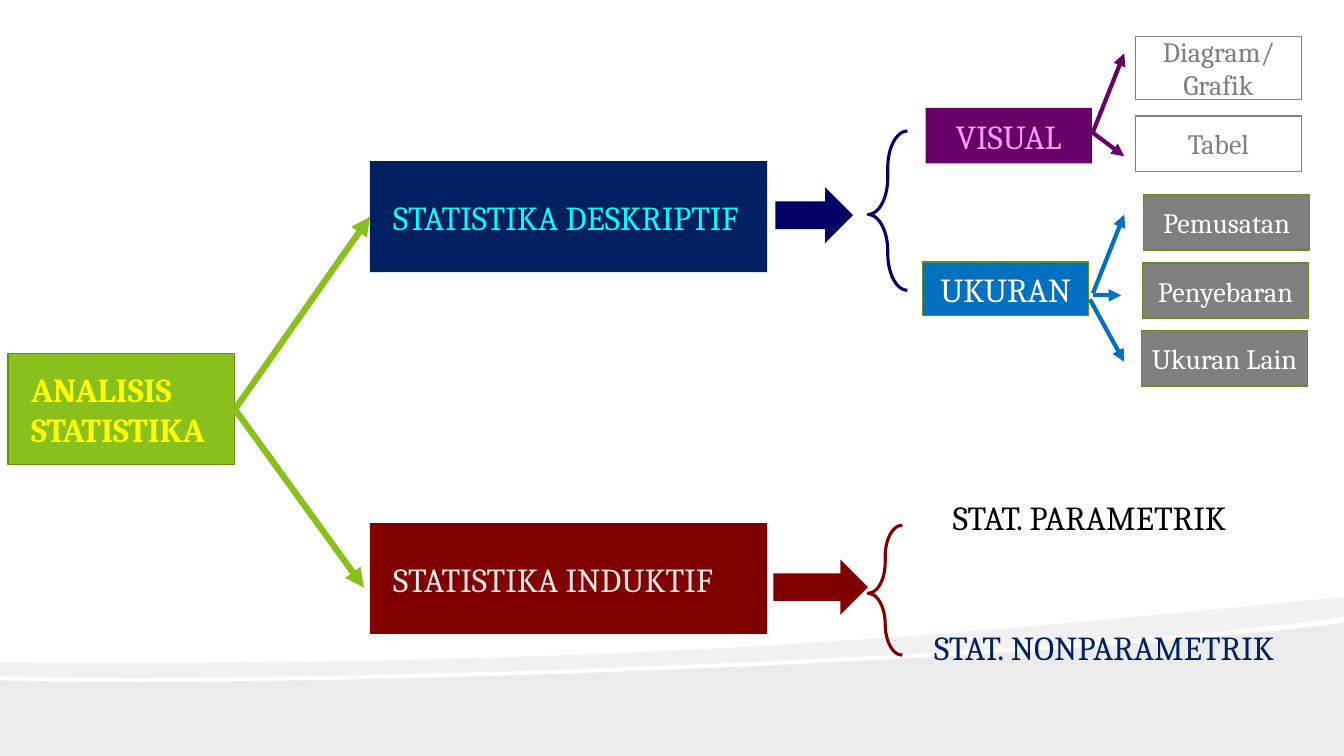
from pptx import Presentation
from pptx import util as u
from pptx.dml.color import RGBColor
from pptx.enum import shapes, text
from pptx.oxml.ns import qn
from lxml import etree

WHITE = RGBColor(0xFF, 0xFF, 0xFF)
BLACK = RGBColor(0, 0, 0)
GREEN = RGBColor(0x89, 0xC0, 0x1C)
OLIVE = RGBColor(0x65, 0x8E, 0x15)
YELLOW = RGBColor(0xFF, 0xFF, 0x00)
NAVY = RGBColor(0x00, 0x20, 0x60)
CYAN = RGBColor(0x00, 0xFF, 0xFF)
DARK = RGBColor(0x00, 0x00, 0x66)
RED = RGBColor(0x80, 0x00, 0x00)
PALE = RGBColor(0xE6, 0xE6, 0xE6)
PURPLE = RGBColor(0x66, 0x00, 0x66)
PINK = RGBColor(0xFF, 0x99, 0xFF)
BLUE = RGBColor(0x00, 0x70, 0xC0)
GRAY = RGBColor(0x7F, 0x7F, 0x7F)

WIDE, HIGH = 13.33, 7.5
FONT = "Cambria"
KIND = shapes.MSO_SHAPE
ALIGN = text.PP_ALIGN


def paint(shape, fill=None, line=None, width=0.85):
    shape.shadow.inherit = False
    if fill is None:
        shape.fill.background()
    else:
        shape.fill.solid()
        shape.fill.fore_color.rgb = fill
    if line is None:
        shape.line.fill.background()
    else:
        shape.line.color.rgb = line
        shape.line.width = u.Pt(width)


def write(shape, words, size=24, color=WHITE, bold=False, align=ALIGN.CENTER, left=0.1):
    frame = shape.text_frame
    frame.word_wrap = True
    frame.vertical_anchor = text.MSO_ANCHOR.MIDDLE
    frame.margin_left = u.Inches(left)
    frame.text = words
    for para in frame.paragraphs:
        para.alignment = align
        font = para.runs[0].font
        font.name, font.size, font.bold = FONT, u.Pt(size), bold
        font.color.rgb = color


def place(slide, kind, box, **look):
    shape = slide.shapes.add_shape(kind, *map(u.Inches, box))
    paint(shape, **look)
    return shape


def card(slide, box, words, fill=None, line=None, **form):
    write(place(slide, KIND.RECTANGLE, box, fill=fill, line=line), words, **form)


def arrow(slide, start, end, color, width=3):
    link = slide.shapes.add_connector(
        shapes.MSO_CONNECTOR.STRAIGHT, *map(u.Inches, start + end))
    link.line.color.rgb = color
    link.line.width = u.Pt(width)
    etree.SubElement(link.line._get_or_add_ln(), qn("a:tailEnd"), type="triangle")
    etree.SubElement(link._element.spPr, qn("a:effectLst"))


def brace(slide, box, color):
    shape = place(slide, KIND.LEFT_BRACE, box, line=color, width=2.25)
    shape.adjustments[0], shape.adjustments[1] = 0.932, 0.524


def wave(slide, start, steps, alpha):
    """Outline whose steps hold one point for a line, three for a curve."""
    unit = 100
    form = slide.shapes.build_freeform(
        *(v * unit for v in start), scale=u.Inches(1) / unit)
    form.add_line_segments([(x * unit, y * unit) for step in steps for x, y in step])
    shape = form.convert_to_shape()
    paint(shape, fill=BLACK)
    tint = shape._element.spPr.find(".//" + qn("a:srgbClr"))
    etree.SubElement(tint, qn("a:alpha"), val=str(alpha * 1000))
    lines = iter(shape._element.spPr.findall(".//" + qn("a:lnTo")))
    for step in steps:
        parts = [next(lines) for _ in step]
        if len(parts) == 3:
            bend = etree.Element(qn("a:cubicBezTo"))
            parts[0].addprevious(bend)
            for part in parts:
                bend.append(part[0])
                part.getparent().remove(part)


def ground(slide):
    wave(slide, (0, 6.75),
         [[(3.52, 6.83), (10.42, 6.55), (WIDE, 6.18)],
          [(WIDE, HIGH)], [(0, HIGH)], [(0, 6.75)]], 8)
    wave(slide, (0, 6.57),
         [[(6.52, 6.62), (9.71, 6.27), (WIDE, 5.92)],
          [(WIDE, 6.12)],
          [(12.55, 6.23), (11.49, 6.33), (10.29, 6.41)],
          [(6.98, 6.63), (2.58, 6.77), (0, 6.71)], [(0, 6.57)]], 5)


def trunk(slide, x, y):
    """Root box and its two main branches; x, y is the root's corner."""
    form = dict(align=ALIGN.JUSTIFY, left=0.23)
    card(slide, (x, y, 2.25, 1.1), "ANALISIS STATISTIKA", GREEN, OLIVE,
         color=YELLOW, bold=True, **form)
    rows = [(-1.91, "STATISTIKA DESKRIPTIF", NAVY, CYAN),
            (1.68, "STATISTIKA INDUKTIF", RED, PALE)]
    for down, words, fill, color in rows:
        card(slide, (x + 3.59, y + down, 3.94, 1.1), words, fill, color=color, **form)
    fork = (x + 2.25, y + 0.55)
    for end in [(x + 3.53, y + 2.32), (x + 3.59, y - 1.36)]:
        arrow(slide, fork, end, GREEN, 4.5)


def group(slide, box, words, look, ends, leaves, form):
    """A labelled box, arrows out of it, and a column of leaf boxes."""
    fill, line, color, ray = look
    card(slide, box, words, fill, line, color=color)
    for start, end in ends:
        arrow(slide, start, end, ray)
    for x, y, high, name in leaves:
        card(slide, (x, y, 1.65, high), name, size=20, **form)


def describe(slide, x, y):
    place(slide, KIND.RIGHT_ARROW, (x, y, 0.77, 0.55), fill=DARK)
    brace(slide, (x + 0.92, y - 0.56, 0.39, 1.58), DARK)
    group(slide, (x + 1.49, y - 0.79, 1.65, 0.55), "VISUAL",
          (PURPLE, None, PINK, PURPLE),
          [((10.84, 1.31), (11.15, 0.53)), ((10.83, 1.31), (11.15, 1.55))],
          [(11.26, 0.36, 0.63, "Diagram/\nGrafik"), (11.26, 1.15, 0.55, "Tabel")],
          dict(fill=WHITE, line=GRAY, color=GRAY))
    group(slide, (x + 1.46, y + 0.74, 1.65, 0.53), "UKURAN",
          (BLUE, OLIVE, WHITE, BLUE),
          [((10.81, 2.97), (11.15, 3.59)), ((10.84, 2.93), (11.12, 2.93)),
           ((10.84, 2.91), (11.15, 2.13))],
          [(11.34, 1.93, 0.55, "Pemusatan"), (11.33, 2.61, 0.55, "Penyebaran"),
           (11.32, 3.28, 0.55, "Ukuran Lain")],
          dict(fill=GRAY, line=OLIVE))


def induce(slide, x, y):
    place(slide, KIND.RIGHT_ARROW, (x, y, 0.94, 0.55), fill=RED)
    brace(slide, (x + 0.94, y - 0.34, 0.34, 1.29), RED)
    card(slide, (x + 1.36, y - 0.77, 3.55, 0.7), "STAT. PARAMETRIK", WHITE, color=BLACK)
    note = slide.shapes.add_textbox(
        *map(u.Inches, (x + 1.36, y + 0.46, 3.84, 0.81)))
    write(note, "STAT. NONPARAMETRIK", color=NAVY)


def main():
    deck = Presentation()
    deck.slide_width, deck.slide_height = u.Inches(WIDE), u.Inches(HIGH)
    slide = deck.slides.add_slide(deck.slide_layouts[6])
    ground(slide)
    trunk(slide, 0.08, 3.51)
    describe(slide, 7.69, 1.86)
    induce(slide, 7.67, 5.55)
    deck.save("out.pptx")


if __name__ == "__main__":
    main()
